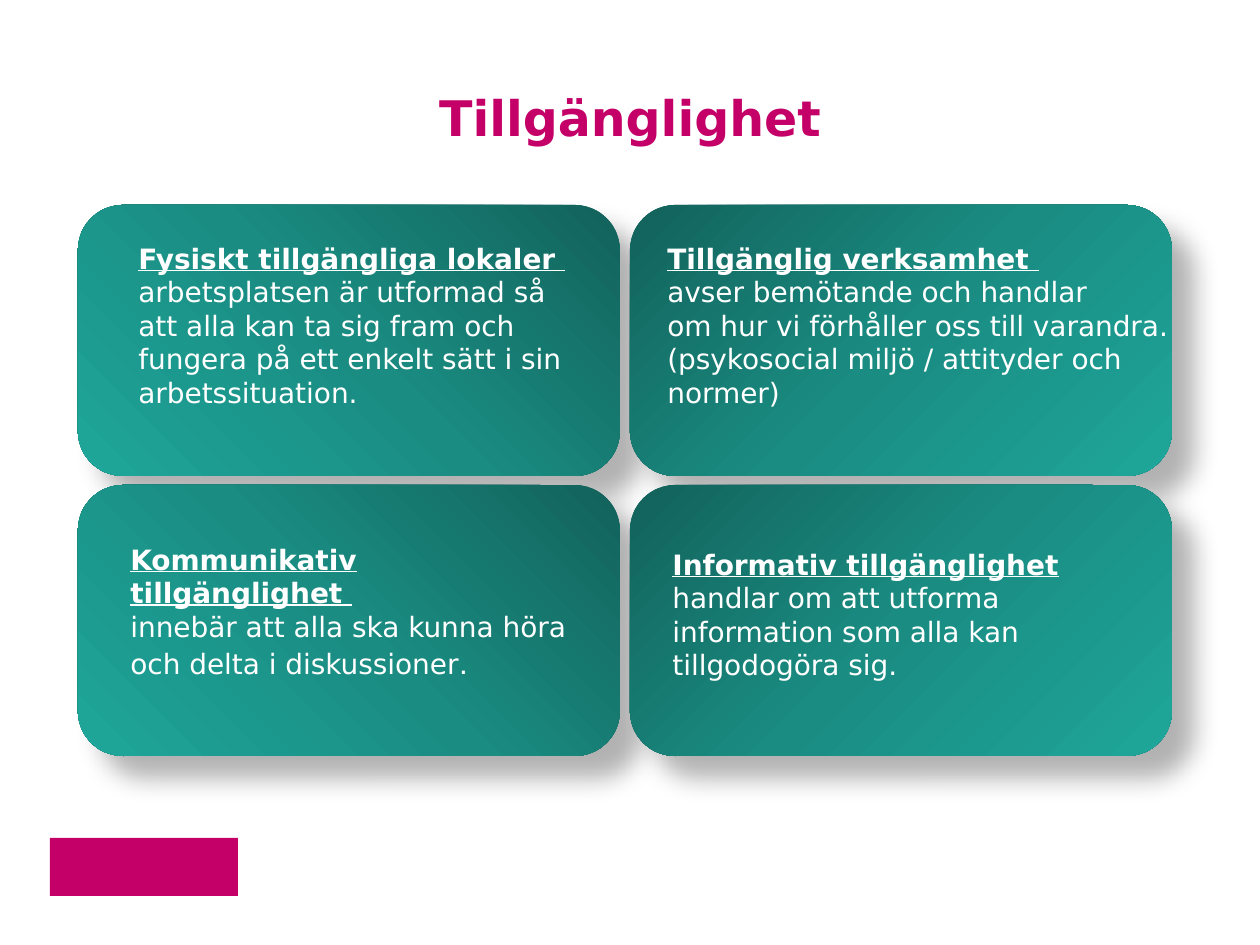
from lxml import etree
from pptx import Presentation
from pptx.dml.color import RGBColor
from pptx.enum.shapes import MSO_SHAPE
from pptx.enum.text import MSO_ANCHOR, PP_ALIGN
from pptx.oxml import parse_xml
from pptx.oxml.ns import nsdecls, qn
from pptx.util import Pt

ROUNDED = MSO_SHAPE.ROUNDED_RECTANGLE
RECTANGLE = MSO_SHAPE.RECTANGLE
MIDDLE = MSO_ANCHOR.MIDDLE
CENTER = PP_ALIGN.CENTER

PX = 914400 // 126
SLIDE_WIDTH, SLIDE_HEIGHT = 1260, 945
TITLE_ONLY = 5

MAGENTA = RGBColor(0xC4, 0x00, 0x68)
WHITE = RGBColor(0xFF, 0xFF, 0xFF)
BLACK = RGBColor(0x00, 0x00, 0x00)
TEAL_STOPS = [
    (0, RGBColor(0x12, 0x62, 0x5B)),
    (50, RGBColor(0x1A, 0x8C, 0x82)),
    (100, RGBColor(0x1F, 0xA6, 0x9A)),
]

TITLE = {"name": "DejaVu Sans", "size": Pt(28), "bold": True}
BODY = {"name": "DejaVu Sans", "size": Pt(16), "bold": False}
HEADING = BODY | {"bold": True, "underline": True}
FULL_STOP = BODY | {"name": "Arial", "size": Pt(18)}

GRID_LEFT, GRID_TOP = 78, 205
CARD_WIDTH, CARD_HEIGHT = 542, 271
COLUMN_STEP, ROW_STEP = 552, 280
COLUMN_ANGLES = (135, 45)

# Each card: text box relative to the card, then (text, format) paragraphs.
CARDS = [
    ((48, 30, 466, 220), [
        [("Fysiskt tillgängliga lokaler ", HEADING)],
        [("arbetsplatsen är utformad så att alla kan ta sig fram och "
          "fungera på ett enkelt sätt i sin arbetssituation.", BODY)],
    ]),
    ((25, 30, 541, 220), [
        [("Tillgänglig verksamhet ", HEADING)],
        [("avser bemötande och handlar", BODY)],
        [("om hur vi förhåller oss till varandra.", BODY)],
        [("(psykosocial miljö / attityder och normer)", BODY)],
    ]),
    ((40, 51, 466, 190), [
        [("Kommunikativ tillgänglighet ", HEADING)],
        [("innebär att alla ska kunna höra och delta i diskussioner", BODY),
         (".", FULL_STOP)],
    ]),
    ((30, 56, 536, 186), [
        [("Informativ tillgänglighet", HEADING)],
        [("handlar om att utforma", BODY)],
        [("information som alla kan tillgodogöra sig.", BODY)],
    ]),
]


def emu(box):
    return [value * PX for value in box]


def add_run(paragraph, text, font_format, color):
    run = paragraph.add_run()
    run.text = text
    for attribute, value in font_format.items():
        setattr(run.font, attribute, value)
    run.font.color.rgb = color


def fill_gradient(shape, angle):
    """Replace the fill by the teal gradient, angle clockwise in degrees."""
    stops = "".join(
        f'<a:gs pos="{position * 1000}"><a:srgbClr val="{color}"/></a:gs>'
        for position, color in TEAL_STOPS)
    shape.fill.background()
    properties = shape._element.spPr
    properties.replace(properties.find(qn("a:noFill")), parse_xml(
        f'<a:gradFill {nsdecls("a")} rotWithShape="1"><a:gsLst>{stops}</a:gsLst>'
        f'<a:lin ang="{angle * 60000}" scaled="0"/></a:gradFill>'))


def cast_shadow(shape):
    shape.shadow.inherit = False
    effects = shape._element.spPr.find(qn("a:effectLst"))
    shadow = etree.SubElement(
        effects, qn("a:outerShdw"), blurRad=str(Pt(15)), dist=str(Pt(18)),
        dir=str(45 * 60000), algn="tl", rotWithShape="0")
    color = etree.SubElement(shadow, qn("a:srgbClr"), val=str(BLACK))
    etree.SubElement(color, qn("a:alpha"), val="30000")


def add_title(slide, box):
    title = slide.shapes.title
    title.left, title.top, title.width, title.height = emu(box)
    title.text_frame.vertical_anchor = MIDDLE
    paragraph = title.text_frame.paragraphs[0]
    paragraph.alignment = CENTER
    add_run(paragraph, "Tillgänglighet", TITLE, MAGENTA)


def add_corner_block(slide, box):
    block = slide.shapes.add_shape(RECTANGLE, *emu(box))
    block.shadow.inherit = False
    block.fill.solid()
    block.fill.fore_color.rgb = MAGENTA
    block.line.fill.background()


def add_card(slide, box, angle, text_box, paragraphs):
    left, top, _, _ = box
    text_left, text_top, text_width, text_height = text_box
    card = slide.shapes.add_group_shape()

    panel = card.shapes.add_shape(ROUNDED, *emu(box))
    panel.line.fill.background()
    fill_gradient(panel, angle)
    cast_shadow(panel)

    frame = card.shapes.add_textbox(*emu(
        (left + text_left, top + text_top, text_width, text_height))).text_frame
    frame.word_wrap = True
    for index, runs in enumerate(paragraphs):
        paragraph = frame.add_paragraph() if index else frame.paragraphs[0]
        for text, font_format in runs:
            add_run(paragraph, text, font_format, WHITE)


def main():
    presentation = Presentation()
    presentation.slide_width = SLIDE_WIDTH * PX
    presentation.slide_height = SLIDE_HEIGHT * PX
    slide = presentation.slides.add_slide(presentation.slide_layouts[TITLE_ONLY])

    add_corner_block(slide, (50, 838, 188, 58))
    add_title(slide, (63, 38, 1134, 158))
    for index, (text_box, paragraphs) in enumerate(CARDS):
        row, column = divmod(index, 2)
        box = (GRID_LEFT + column * COLUMN_STEP, GRID_TOP + row * ROW_STEP,
               CARD_WIDTH, CARD_HEIGHT)
        add_card(slide, box, COLUMN_ANGLES[column], text_box, paragraphs)

    presentation.save("out.pptx")


if __name__ == "__main__":
    main()
